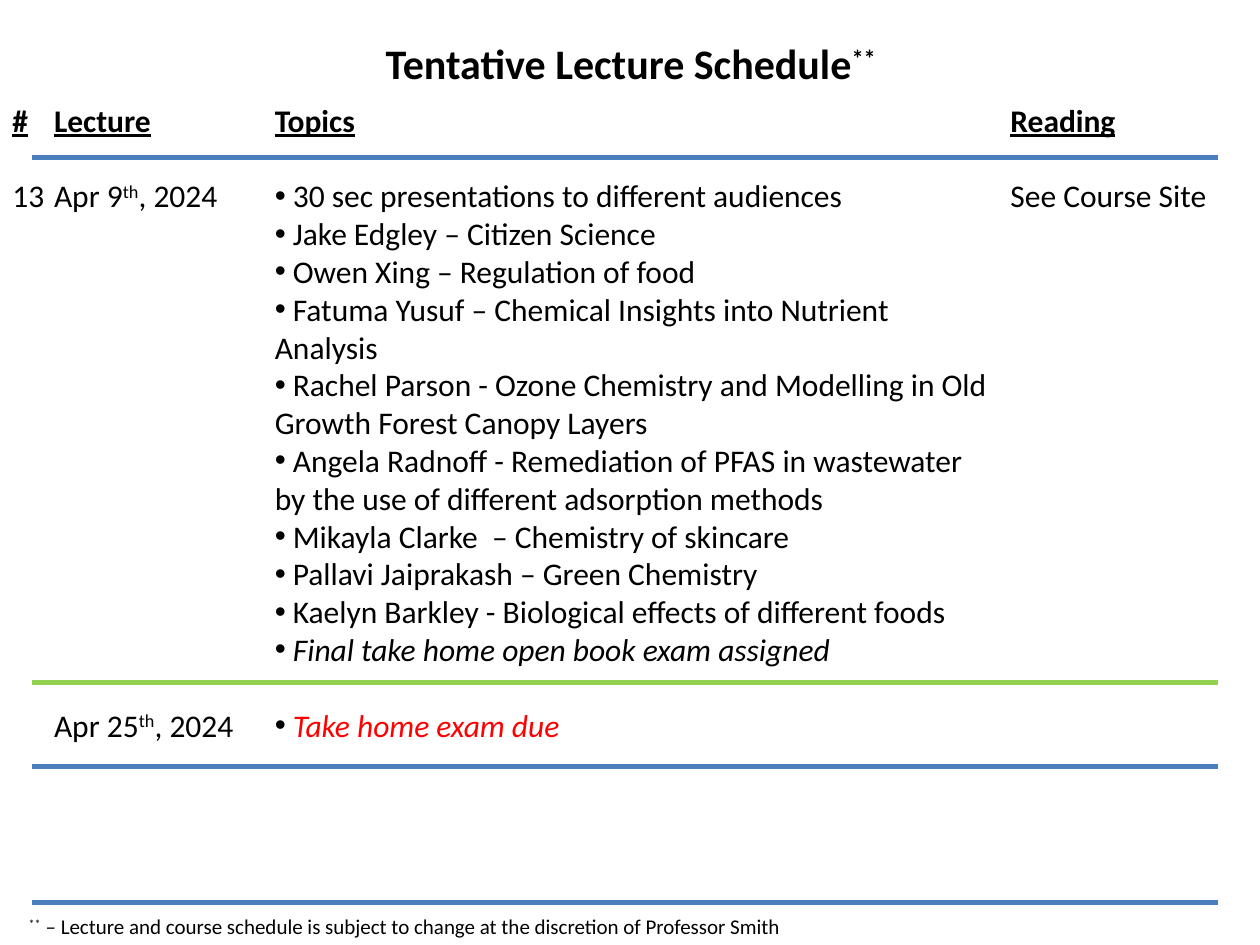
from dataclasses import dataclass

from lxml.etree import SubElement
from pptx import Presentation
from pptx.dml.color import RGBColor
from pptx.enum.shapes import MSO_CONNECTOR
from pptx.enum.text import PP_ALIGN
from pptx.oxml.ns import qn
from pptx.util import Cm, Pt

COLORS = {"text": "000000", "due": "FF0000", "rule": "4B7EBC", "exam_rule": "92D050"}
LINE_PITCH = 21.6  # points between lines of 18 pt text
HEADER_TOP = 1.91


@dataclass(frozen=True)
class Piece:
    text: str
    raised: bool = False
    italic: bool = False
    color: str = "text"


@dataclass(frozen=True)
class Line:
    pieces: tuple[Piece, ...]
    size: int = 18
    heading: bool = False
    bullet: bool = False
    bold: bool = False
    centered: bool = False
    lines_before: int = 0


@dataclass(frozen=True)
class Block:
    left: float
    top: float
    width: float
    height: float
    lines: tuple[Line, ...]
    wrap: bool = True


@dataclass(frozen=True)
class Rule:
    y: float
    color: str = "rule"


def heading(text: str) -> Line:
    return Line((Piece(text),), heading=True, bold=True)


def date(day: str, lines_before: int) -> Line:
    return Line((Piece(day), Piece("th", raised=True), Piece(", 2024")),
                lines_before=lines_before)


def topic(text: str, lines_before: int = 0, italic: bool = False,
          color: str = "text") -> Line:
    # The space after the bullet stays upright
    return Line((Piece(" "), Piece(text, italic=italic, color=color)),
                bullet=True, lines_before=lines_before)


def draw_line(paragraph, line: Line) -> None:
    properties = paragraph._p.get_or_add_pPr()
    if line.bullet:
        properties.set("marL", "0")
        properties.set("indent", "0")
        SubElement(properties, qn("a:buFont")).set("typeface", "Arial")
        SubElement(properties, qn("a:buChar")).set("char", "•")
    if line.lines_before:
        paragraph.space_before = Pt(round(line.lines_before * LINE_PITCH, 1))
    paragraph.alignment = PP_ALIGN.CENTER if line.centered else PP_ALIGN.LEFT
    paragraph.font.name = "Calibri"
    paragraph.font.size = Pt(line.size)
    paragraph.font.bold = line.bold
    paragraph.font.underline = line.heading
    for piece in line.pieces:
        run = paragraph.add_run()
        run.text = piece.text
        run.font.italic = piece.italic
        run.font.color.rgb = RGBColor.from_string(COLORS[piece.color])
        if piece.raised:
            run._r.get_or_add_rPr().set("baseline", "30000")


def draw_block(slide, block: Block) -> None:
    frame = slide.shapes.add_textbox(
        Cm(block.left), Cm(block.top), Cm(block.width), Cm(block.height)).text_frame
    frame.word_wrap = block.wrap
    for index, line in enumerate(block.lines):
        draw_line(frame.add_paragraph() if index else frame.paragraphs[0], line)


def draw_rule(slide, rule: Rule) -> None:
    connector = slide.shapes.add_connector(
        MSO_CONNECTOR.STRAIGHT, Cm(0.64), Cm(rule.y), Cm(24.56), Cm(rule.y))
    connector.line.color.rgb = RGBColor.from_string(COLORS[rule.color])
    connector.line.width = Pt(3)
    SubElement(connector._element.spPr, qn("a:effectLst"))


TALKS = (
    "Jake Edgley – Citizen Science",
    "Owen Xing – Regulation of food",
    "Fatuma Yusuf – Chemical Insights into Nutrient Analysis",
    "Rachel Parson - Ozone Chemistry and Modelling in Old Growth Forest Canopy Layers",
    "Angela Radnoff - Remediation of PFAS in wastewater by the use of different "
    "adsorption methods",
    "Mikayla Clarke  – Chemistry of skincare",
    "Pallavi Jaiprakash – Green Chemistry",
    "Kaelyn Barkley - Biological effects of different foods",
)

BLOCKS = (
    # Title
    Block(7.42, 0.64, 10.59, 1.27, (
        Line((Piece("Tentative Lecture Schedule"), Piece("**", raised=True)),
             size=24, bold=True, centered=True),)),
    # Schedule columns
    Block(0, HEADER_TOP, 1.7, 2.57, (
        heading("#"), Line((Piece("13"),), lines_before=1))),
    Block(0.84, HEADER_TOP, 4.45, 13.34, (
        heading("Lecture"), date("Apr 9", 1), date("Apr 25", 13))),
    Block(5.29, HEADER_TOP, 15.04, 13.34, (
        heading("Topics"),
        topic("30 sec presentations to different audiences", lines_before=1),
        *(topic(talk) for talk in TALKS),
        topic("Final take home open book exam assigned", italic=True),
        topic("Take home exam due", lines_before=1, italic=True, color="due"))),
    Block(20.12, HEADER_TOP, 4.88, 3.33, (
        heading("Reading"), Line((Piece("See Course Site"),), lines_before=1))),
    # Footnote
    Block(0.33, 18.29, 15.88, 0.76, (
        Line((Piece("**", raised=True),
              Piece(" – Lecture and course schedule is subject to change at the "
                    "discretion of Professor Smith")), size=12),), wrap=False),
)

RULES = (Rule(3.18), Rule(13.76, "exam_rule"), Rule(15.45), Rule(18.2))


def main() -> None:
    presentation = Presentation()
    presentation.slide_width = Cm(25.4)
    presentation.slide_height = Cm(19.05)
    slide = presentation.slides.add_slide(presentation.slide_layouts[6])
    for block in BLOCKS:
        draw_block(slide, block)
    for rule in RULES:
        draw_rule(slide, rule)
    presentation.save("out.pptx")


if __name__ == "__main__":
    main()
